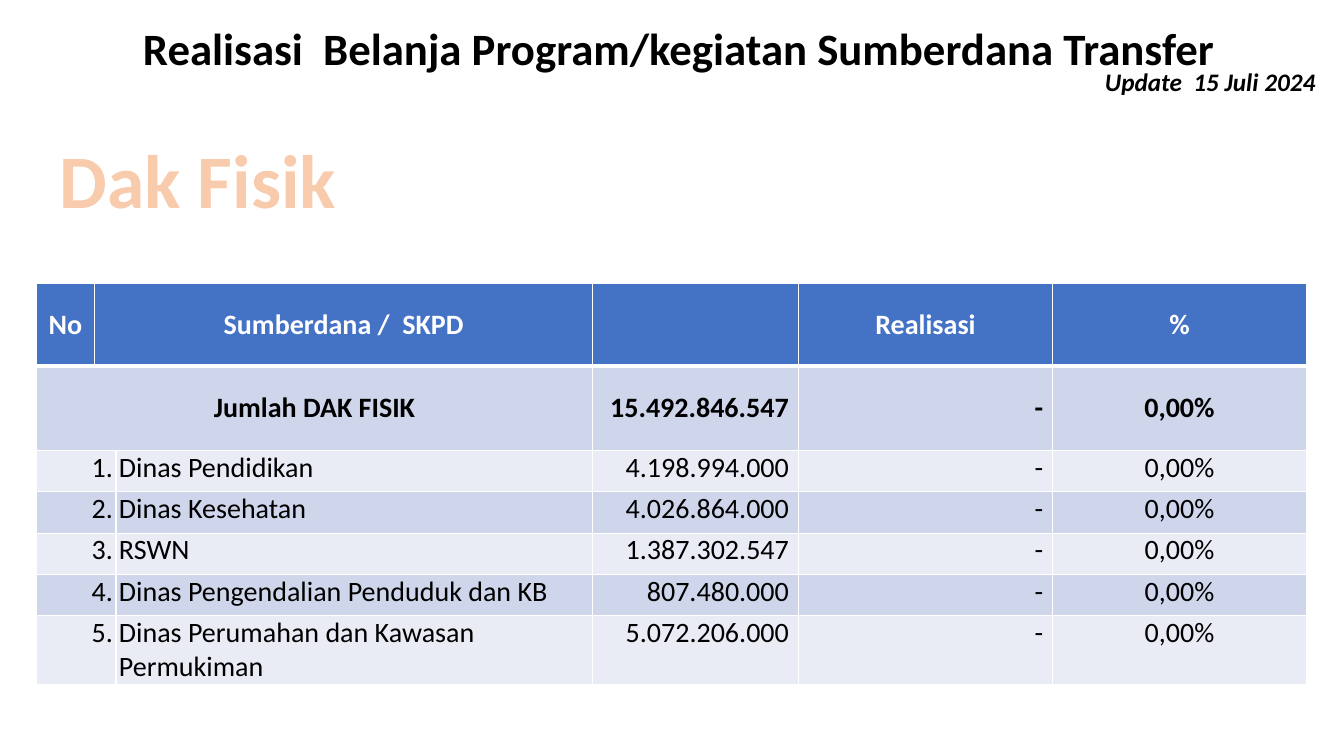
"""Build the slide on DAK Fisik spending by agency."""
from lxml.etree import SubElement
from pptx import Presentation
from pptx.dml.color import RGBColor
from pptx.enum.text import MSO_ANCHOR, PP_ALIGN
from pptx.oxml.ns import qn
from pptx.util import Inches, Pt

WHITE, BLACK, BLUE, PEACH = "FFFFFF", "000000", "4472C4", "F8CBAD"
BANDS = ["CFD5EA", "E9EBF5"]
LEFT, CENTER, RIGHT = PP_ALIGN.LEFT, PP_ALIGN.CENTER, PP_ALIGN.RIGHT
COLS = [0.58, 0.21, 4.73, 2.04, 2.52, 2.52]
ROWS = [0.82, 0.84, 0.41, 0.41, 0.41, 0.41, 0.68]
HEADER = ["No", "Sumberdana /  SKPD", "", "", "Realisasi", "%"]
TOTAL = ["Jumlah DAK FISIK", "", "", "15.492.846.547 ", "- ", "0,00%"]
AGENCIES = [
    ("Dinas Pendidikan", "4.198.994.000 "),
    ("Dinas Kesehatan", "4.026.864.000 "),
    ("RSWN", "1.387.302.547 "),
    ("Dinas Pengendalian Penduduk dan KB", "807.480.000 "),
    ("Dinas Perumahan dan Kawasan Permukiman", "5.072.206.000 "),
]


def rgb(color):
    """Return the colour for a hex string."""
    return RGBColor.from_string(color)


def write(tf, text, size, color, align=LEFT, **fmt):
    """Write one formatted paragraph and return it."""
    p = tf.paragraphs[0]
    p.alignment = align
    r = p.add_run()
    r.text = text
    r.font.color.rgb = rgb(color)
    for name, value in {"name": "Calibri", "size": Pt(size), **fmt}.items():
        setattr(r.font, name, value)
    return p


def add_text(s, box, text, size, color, wrap=False, anchor=MSO_ANCHOR.TOP, **fmt):
    """Add a text box and return its paragraph."""
    tf = s.shapes.add_textbox(*map(Inches, box)).text_frame
    tf.word_wrap = wrap
    tf.vertical_anchor = anchor
    return write(tf, text, size, color, **fmt)


def add_borders(cell, bottom=1):
    """Give a cell white borders."""
    tcPr = cell._tc.get_or_add_tcPr()
    for side, width in {"L": 1, "R": 1, "T": 1, "B": bottom}.items():
        ln = SubElement(tcPr, qn(f"a:ln{side}"), w=str(Pt(width)))
        fill = SubElement(ln, qn("a:solidFill"))
        SubElement(fill, qn("a:srgbClr"), val=WHITE)


def format_cell(cell, text, i, align):
    """Fill, border and write a cell of row i."""
    header = i == 0
    add_borders(cell, 3 if header else 1)
    cell.fill.solid()
    cell.fill.fore_color.rgb = rgb(BLUE if header else BANDS[(i - 1) % 2])
    fmt = {"vertical_anchor": MSO_ANCHOR.MIDDLE if i < 2 else MSO_ANCHOR.TOP}
    if not header:
        fmt.update(margin_left=Inches(0.03), margin_right=Inches(0.03),
                   margin_top=0, margin_bottom=0)
    for name, value in fmt.items():
        setattr(cell, name, value)
    if text:
        write(cell.text_frame, text, 20, WHITE if header else BLACK, align, bold=i < 2)


def add_budget_table(s):
    """Add the table of budget and spending by agency."""
    rows = [HEADER, TOTAL] + [[f"{n}.", "", name, budget, "- ", "0,00%"]
                              for n, (name, budget) in enumerate(AGENCIES, 1)]
    box = map(Inches, (0.36, 2.81, sum(COLS), sum(ROWS)))
    table = s.shapes.add_table(len(ROWS), len(COLS), *box).table
    for col, width in zip(table.columns, COLS):
        col.width = Inches(width)
    for row, height in zip(table.rows, ROWS):
        row.height = Inches(height)
    for i, texts in enumerate(rows):
        aligns = [CENTER] * 6 if i == 0 else [
            CENTER if i == 1 else RIGHT, LEFT, LEFT, RIGHT, RIGHT, CENTER]
        for j, (text, align) in enumerate(zip(texts, aligns)):
            format_cell(table.cell(i, j), text, i, align)
        first, last = {0: (1, 2), 1: (0, 2)}.get(i, (0, 1))
        table.cell(i, first).merge(table.cell(i, last))


def main():
    """Build and save the slide."""
    prs = Presentation()
    prs.slide_width, prs.slide_height = Inches(13.33), Inches(7.5)
    s = prs.slides.add_slide(prs.slide_layouts[6])
    title = add_text(s, (1.32, 0, 11.5, 1.01),
                     "Realisasi  Belanja Program/kegiatan Sumberdana Transfer",
                     32, BLACK, wrap=True, anchor=MSO_ANCHOR.MIDDLE, bold=True)
    title.line_spacing = 0.9
    add_budget_table(s)
    add_text(s, (10.86, 0.61, 2.31, 0.4), "Update  15 Juli 2024", 18, BLACK,
             bold=True, italic=True)
    add_text(s, (0.48, 1.27, 2.97, 1.01), "Dak Fisik", 54, PEACH,
             align=CENTER, bold=True)
    prs.save("out.pptx")


if __name__ == "__main__":
    main()
